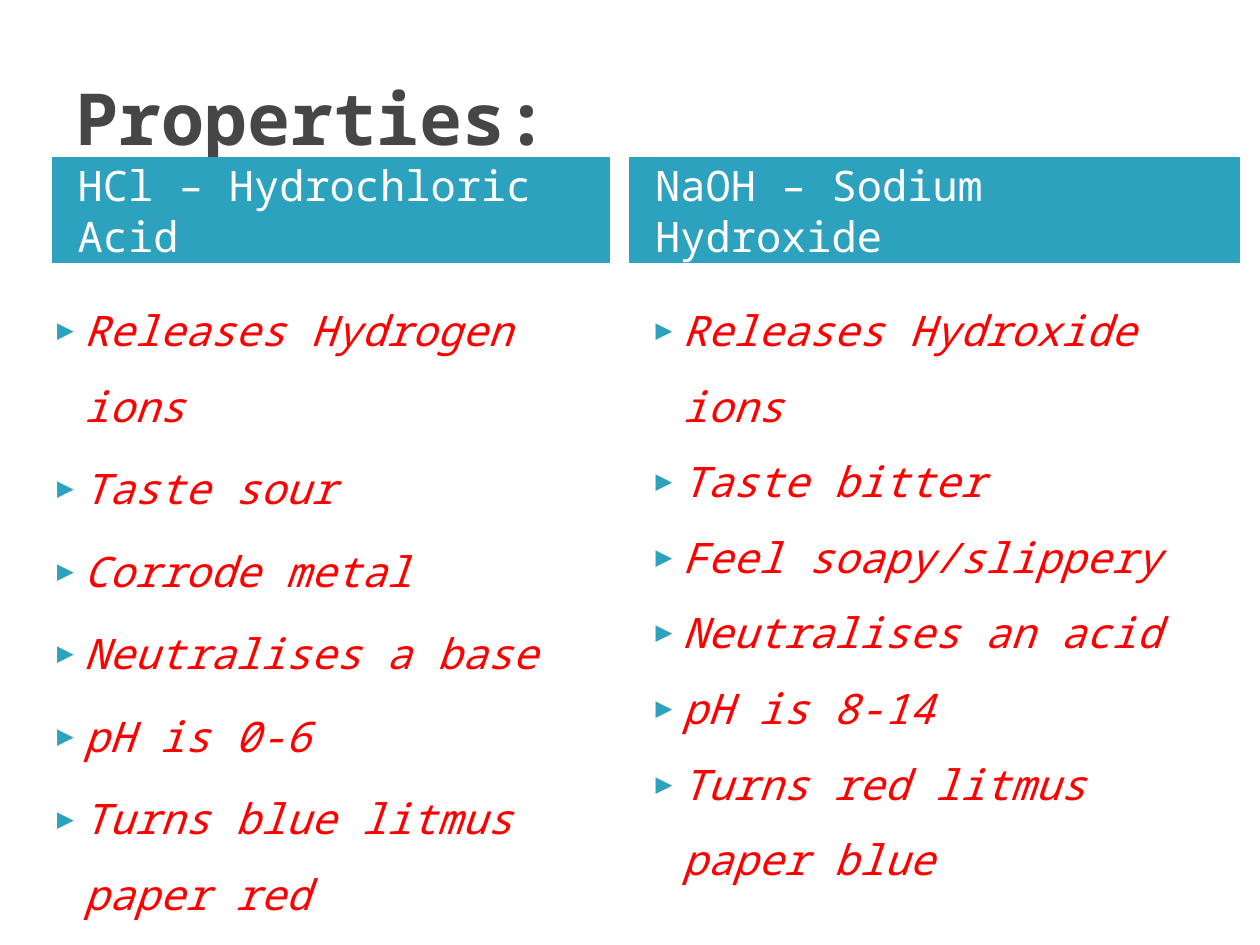
from dataclasses import dataclass

from lxml import etree
from pptx import Presentation
from pptx import util as u
from pptx.dml.color import RGBColor
from pptx.enum import shapes, text
from pptx.oxml import ns


@dataclass(frozen=True)
class Theme:
    font: str = "Noto Sans Mono"
    title: str = "464646"
    accent: str = "2DA2BF"
    heading: str = "FFFFFF"
    point: str = "FF0000"
    title_size: int = 41
    body_size: int = 24


THEME = Theme()

# heading left and width, list left, space between points, heading, points
COLUMNS = [
    (30, 318, 12, 4, "HCl – Hydrochloric Acid",
     ["Releases Hydrogen ions", "Taste sour", "Corrode metal",
      "Neutralises a base", "pH is 0-6", "Turns blue litmus paper red"]),
    (360, 348, 354, 0, "NaOH – Sodium Hydroxide",
     ["Releases Hydroxide ions", "Taste bitter", "Feel soapy/slippery",
      "Neutralises an acid", "pH is 8-14", "Turns red litmus paper blue"]),
]


def add_run(para, words, size, color, bold=False, italic=False):
    para.alignment = text.PP_ALIGN.LEFT
    run = para.add_run()
    run.text = words
    run.font.name = THEME.font
    run.font.size = u.Pt(size)
    run.font.bold = bold
    run.font.italic = italic
    run.font.color.rgb = RGBColor.from_string(color)


def add_bullet(para):
    props = para._p.get_or_add_pPr()
    props.set("marL", str(u.Pt(28.8)))
    props.set("indent", str(u.Pt(-20.16)))
    color = etree.SubElement(props, ns.qn("a:buClr"))
    etree.SubElement(color, ns.qn("a:srgbClr"), val=THEME.accent)
    etree.SubElement(props, ns.qn("a:buSzPct"), val="68000")
    etree.SubElement(props, ns.qn("a:buFont"), typeface=THEME.font)
    etree.SubElement(props, ns.qn("a:buChar"), char="▶")


def add_text_box(page, left, top, width, height, anchor):
    box = page.shapes.add_textbox(*map(u.Pt, (left, top, width, height)))
    box.text_frame.word_wrap = True
    box.text_frame.vertical_anchor = anchor
    return box.text_frame


def add_title(page, words):
    frame = add_text_box(page, 36, 21.6, 648, 90, text.MSO_ANCHOR.MIDDLE)
    add_run(frame.paragraphs[0], words, THEME.title_size, THEME.title, bold=True)


def add_heading(page, left, width, words):
    bar = page.shapes.add_shape(
        shapes.MSO_SHAPE.RECTANGLE, *map(u.Pt, (left, 90, width, 60)))
    bar.shadow.inherit = False
    bar.fill.solid()
    bar.fill.fore_color.rgb = RGBColor.from_string(THEME.accent)
    bar.line.color.rgb = RGBColor.from_string(THEME.accent)
    bar.line.width = u.Pt(0.75)
    frame = bar.text_frame
    frame.word_wrap = True
    frame.vertical_anchor = text.MSO_ANCHOR.MIDDLE
    frame.margin_left = u.Pt(14.4)
    add_run(frame.paragraphs[0], words, THEME.body_size, THEME.heading)


def add_points(page, left, gap, points):
    frame = add_text_box(page, left, 156, 354, 370, text.MSO_ANCHOR.TOP)
    for index, words in enumerate(points):
        para = frame.add_paragraph() if index else frame.paragraphs[0]
        add_bullet(para)
        para.line_spacing = 1.5
        para.space_before = u.Pt(gap if index else 0)
        add_run(para, words, THEME.body_size, THEME.point, italic=True)


def main():
    deck = Presentation()
    deck.slide_width, deck.slide_height = u.Pt(720), u.Pt(540)
    page = deck.slides.add_slide(deck.slide_layouts[6])

    # Title
    add_title(page, "Properties:")

    # Acid and base columns
    for left, width, list_left, gap, heading, points in COLUMNS:
        add_heading(page, left, width, heading)
        add_points(page, list_left, gap, points)

    deck.save("out.pptx")


if __name__ == "__main__":
    main()
